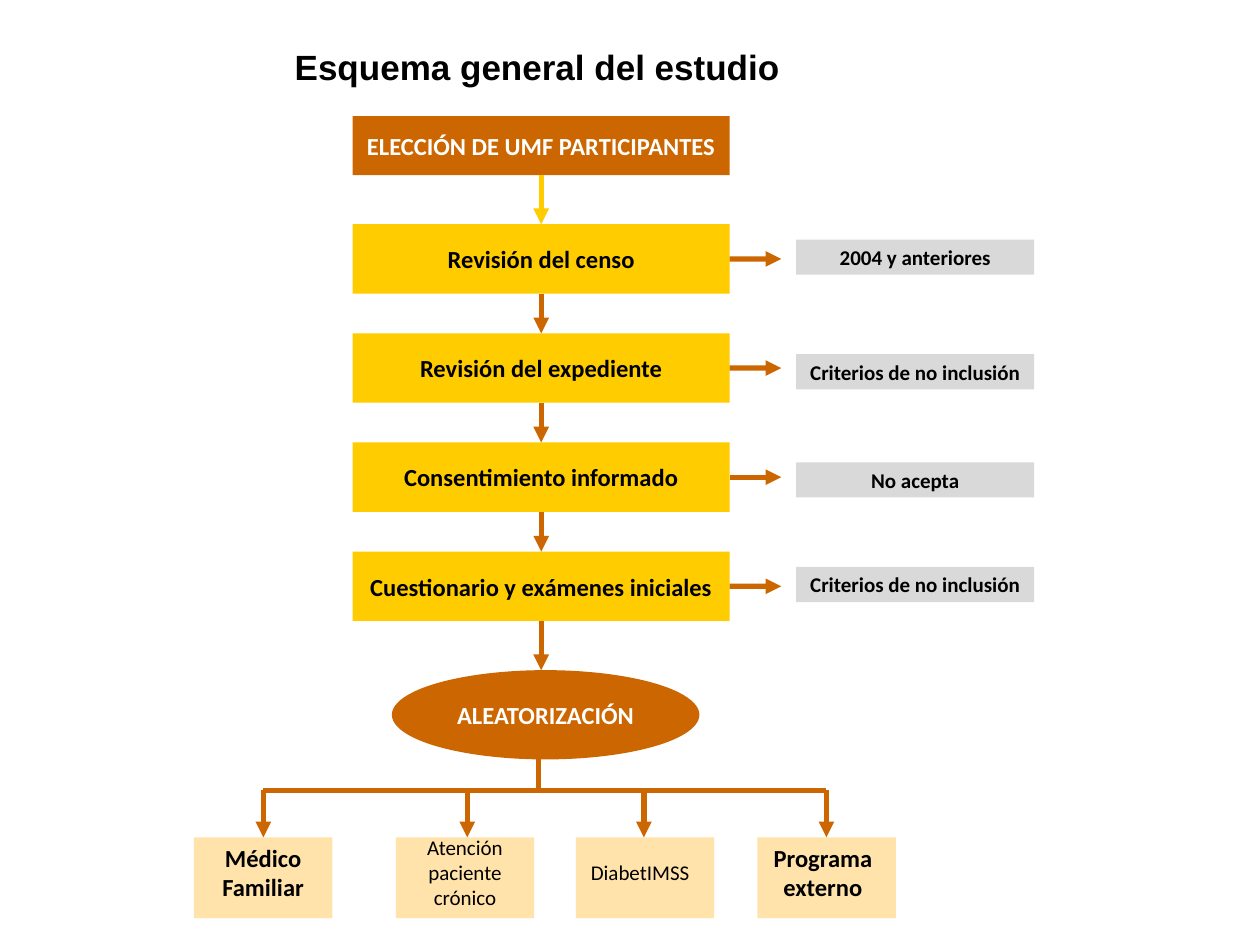
from pptx import Presentation
from pptx.dml.color import RGBColor
from pptx.enum.shapes import MSO_CONNECTOR as Line, MSO_SHAPE as Shape
from pptx.enum.text import MSO_ANCHOR as Anchor, MSO_AUTO_SIZE as AutoSize, PP_ALIGN as Align
from pptx.oxml.ns import qn
from pptx.util import Cm, Pt
from lxml.etree import SubElement

# Content; positions in centimetres
TITLE = "Esquema general del estudio"
START = "ELECCIÓN DE UMF PARTICIPANTES"
# step, exclusion, top of the exclusion box
STEPS = [
    ("Revisión del censo", "2004 y anteriores", 4.83),
    ("Revisión del expediente", "Criterios de no inclusión", 7.14),
    ("Consentimiento informado", "No acepta", 9.32),
    ("Cuestionario y exámenes iniciales", "Criterios de no inclusión", 11.43),
]
RANDOMIZATION = "ALEATORIZACIÓN"
# group, box left, label left, label width, arrow x, main group
GROUPS = [
    ("Médico Familiar", 3.91, 3.91, 2.79, 5.31, True),
    ("Atención paciente crónico", 7.98, 7.98, 2.79, 9.42, False),
    ("DiabetIMSS", 11.61, 11.51, 2.79, 12.98, False),
    ("Programa externo", 15.27, 15.09, 3.0, 16.66, True),
]

THEME = {
    "orange": "CC6600", "yellow": "FFCC00", "cream": "FFE3AB", "gray": "D9D9D9",
    "black": "000000", "white": "FFFFFF",
    "heading": "Arial", "body": "Calibri",
    "title_size": 20, "main_size": 14, "small_size": 12, "line": 3,
}

# Layout
STEP_LEFT, STEP_TOP, STEP_WIDTH, STEP_HEIGHT, STEP_PITCH = 7.11, 4.52, 7.6, 1.4, 2.2
AXIS = STEP_LEFT + STEP_WIDTH / 2
EXIT_END = 15.75
OVAL_TOP, TRUNK_X, TRUNK_TOP, BRANCH_Y = 13.51, 10.85, 15.11, 15.93
GROUP_TOP = 16.88

prs = Presentation()
prs.slide_width, prs.slide_height = Cm(25.4), Cm(19.05)
slide = prs.slides.add_slide(prs.slide_layouts[5])


def color(name):
    return RGBColor.from_string(THEME[name])


def write(holder, text, *, size="main_size", ink="black", font="body", bold=True,
          align=Align.CENTER, anchor=Anchor.MIDDLE, wrap=True, inset=0.25):
    frame = holder.text_frame
    frame.word_wrap, frame.vertical_anchor = wrap, anchor
    frame.margin_left = frame.margin_right = Cm(inset)
    frame.margin_top = frame.margin_bottom = Cm(0.13)
    paragraph = frame.paragraphs[0]
    paragraph.alignment = align
    run = paragraph.add_run()
    run.text = text
    run.font.name, run.font.size, run.font.bold = THEME[font], Pt(THEME[size]), bold
    run.font.color.rgb = color(ink)


def box(left, top, width, height, fill, preset=Shape.RECTANGLE):
    block = slide.shapes.add_shape(preset, Cm(left), Cm(top), Cm(width), Cm(height))
    block.shadow.inherit = False
    block.fill.solid()
    block.fill.fore_color.rgb = color(fill)
    block.line.fill.background()
    return block


def link(x1, y1, x2, y2, ink="orange", arrow=True, source=None, target=None):
    """Draw a line; source and target are (box, side) pairs to join."""
    connector = slide.shapes.add_connector(Line.STRAIGHT, Cm(x1), Cm(y1), Cm(x2), Cm(y2))
    connector.line.color.rgb = color(ink)
    connector.line.width = Pt(THEME["line"])
    if arrow:
        SubElement(connector.line._get_or_add_ln(), qn("a:tailEnd"), type="triangle")
    SubElement(connector._element.spPr, qn("a:effectLst"))
    if source:
        connector.begin_connect(*source)
    if target:
        connector.end_connect(*target)


# Title
title = slide.shapes.title
title.left, title.top, title.width, title.height = Cm(5.69), Cm(0.79), Cm(10.36), Cm(1.12)
write(title, TITLE, size="title_size", font="heading", align=Align.LEFT,
      anchor=Anchor.TOP, wrap=False)
title.text_frame.auto_size = AutoSize.SHAPE_TO_FIT_TEXT

# Starting point
previous = box(STEP_LEFT, 2.34, STEP_WIDTH, 1.19, "orange")
write(previous, START, ink="white", inset=0.1)
previous_bottom = 3.53

# Steps with their exclusions
for i, (step_text, exclusion_text, exclusion_top) in enumerate(STEPS):
    top = STEP_TOP + i * STEP_PITCH
    middle = top + STEP_HEIGHT / 2
    step = box(STEP_LEFT, top, STEP_WIDTH, STEP_HEIGHT, "yellow")
    write(step, step_text, inset=0.1)
    link(AXIS, previous_bottom, AXIS, top, ink="orange" if i else "yellow",
         source=(previous, 2), target=(step, 0))
    link(STEP_LEFT + STEP_WIDTH, middle, EXIT_END, middle, source=(step, 3))
    exclusion = box(16.05, exclusion_top, 4.8, 0.71, "gray")
    write(exclusion, exclusion_text, size="small_size", inset=0.1)
    previous, previous_bottom = step, top + STEP_HEIGHT

# Randomization
oval = box(7.9, OVAL_TOP, 6.2, 1.8, "orange", Shape.OVAL)
write(oval, RANDOMIZATION, ink="white")
link(AXIS, previous_bottom, AXIS, OVAL_TOP, source=(previous, 2))

# Branches to the groups
link(TRUNK_X, TRUNK_TOP, TRUNK_X, BRANCH_Y, arrow=False)
link(GROUPS[-1][4], BRANCH_Y, GROUPS[0][4], BRANCH_Y, arrow=False)
for group, box_left, label_left, label_width, arrow_x, main in GROUPS:
    box(box_left, GROUP_TOP, 2.79, 1.63, "cream")
    label = slide.shapes.add_textbox(Cm(label_left), Cm(GROUP_TOP), Cm(label_width), Cm(1.4))
    write(label, group, size="main_size" if main else "small_size", bold=main)
    link(arrow_x, BRANCH_Y, arrow_x, GROUP_TOP)

prs.save("out.pptx")
